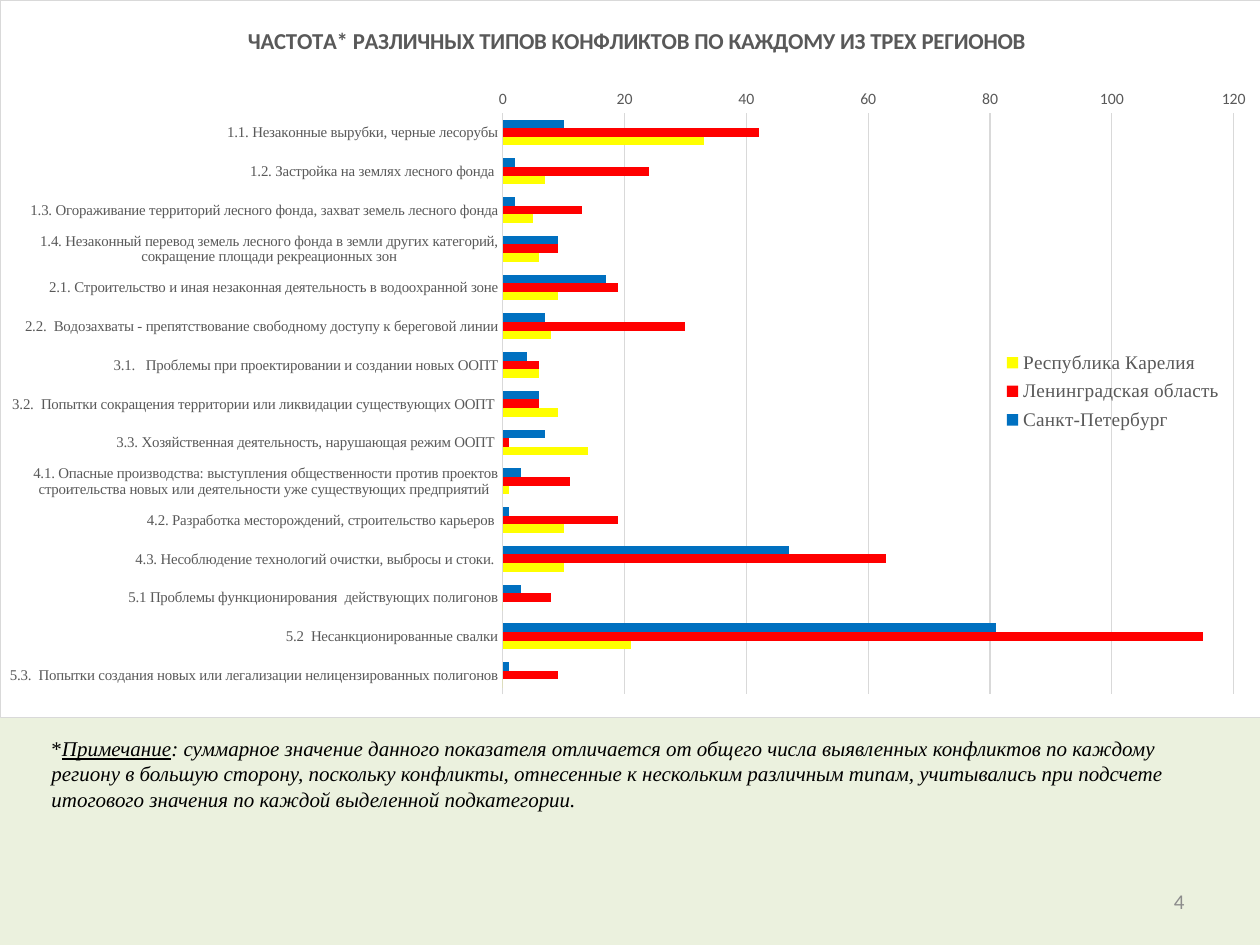
"""Slide with a bar chart of conflict types in three regions and a footnote."""
import pptx
import pptx.chart.data
import pptx.dml.color
import pptx.enum.chart
import pptx.enum.text
import pptx.oxml
import pptx.oxml.ns
import pptx.util

RGB = pptx.dml.color.RGBColor
PAPER = RGB(0xEB, 0xF1, 0xDE)
TEXT = RGB(0x59, 0x59, 0x59)
RULE = RGB(0xD9, 0xD9, 0xD9)
MUTED = RGB(0x8C, 0x8C, 0x8C)
BLACK = RGB(0, 0, 0)
BLUE = RGB(0x00, 0x70, 0xC0)
RED = RGB(0xFF, 0, 0)
YELLOW = RGB(0xFF, 0xFF, 0)
SANS, SERIF = "Calibri", "Times New Roman"

CATEGORIES = [
    "1.1. Незаконные вырубки, черные лесорубы",
    "1.2. Застройка на землях лесного фонда ",
    "1.3. Огораживание территорий лесного фонда, захват земель лесного фонда",
    "1.4. Незаконный перевод земель лесного фонда в земли других категорий, "
    "сокращение площади рекреационных зон",
    "2.1. Строительство и иная незаконная деятельность в водоохранной зоне",
    "2.2.  Водозахваты - препятствование свободному доступу к береговой линии",
    "3.1.   Проблемы при проектировании и создании новых ООПТ",
    "3.2.  Попытки сокращения территории или ликвидации существующих ООПТ ",
    "3.3. Хозяйственная деятельность, нарушающая режим ООПТ ",
    "4.1. Опасные производства: выступления общественности против проектов "
    "строительства новых или деятельности уже существующих предприятий ",
    "4.2. Разработка месторождений, строительство карьеров ",
    "4.3. Несоблюдение технологий очистки, выбросы и стоки. ",
    "5.1 Проблемы функционирования  действующих полигонов",
    "5.2  Несанкционированные свалки",
    "5.3.  Попытки создания новых или легализации нелицензированных полигонов",
]
REGIONS = [
    ("Санкт-Петербург", BLUE, (10, 2, 2, 9, 17, 7, 4, 6, 7, 3, 1, 47, 3, 81, 1)),
    ("Ленинградская область", RED, (42, 24, 13, 9, 19, 30, 6, 6, 1, 11, 19, 63, 8, 115, 9)),
    ("Республика Карелия", YELLOW, (33, 7, 5, 6, 9, 8, 6, 9, 14, 1, 10, 10, 0, 21, 0)),
]
NOTE = [
    ("*", False, False),
    ("Примечание", True, True),
    (": суммарное значение данного показателя отличается от общего числа выявленных "
     "конфликтов по каждому региону в большую сторону, поскольку конфликты, отнесенные "
     "к нескольким различным типам, учитывались при подсчете итогового значения "
     "по каждой выделенной подкатегории.", True, False),
]


def style(font, name, size, color):
    font.name, font.size = name, pptx.util.Pt(size)
    font.color.rgb = color


def place(element, index, target, x, y, w, h):
    for old in element.findall(pptx.oxml.ns.qn("c:layout")):
        element.remove(old)
    inner = f'<c:layoutTarget val="{target}"/>' if target else ""
    element.insert(index, pptx.oxml.parse_xml(
        f'<c:layout {pptx.oxml.ns.nsdecls("c")}><c:manualLayout>{inner}'
        '<c:xMode val="edge"/><c:yMode val="edge"/>'
        f'<c:x val="{x}"/><c:y val="{y}"/><c:w val="{w}"/><c:h val="{h}"/>'
        '</c:manualLayout></c:layout>'))


prs = pptx.Presentation()
prs.slide_width, prs.slide_height = pptx.util.Inches(10), pptx.util.Inches(7.5)
W, H = prs.slide_width, prs.slide_height
s = prs.slides.add_slide(prs.slide_layouts[6])
s.background.fill.solid()
s.background.fill.fore_color.rgb = PAPER

data = pptx.chart.data.CategoryChartData()
data.categories = CATEGORIES
for name, color, values in REGIONS:
    data.add_series(name, values)
chart = s.shapes.add_chart(
    pptx.enum.chart.XL_CHART_TYPE.BAR_CLUSTERED,
    0, 0, int(W * 1.01), int(H * 0.76), data).chart
style(chart.font, SANS, 10, BLACK)
chart._chartSpace.chart.addnext(pptx.oxml.parse_xml(
    f'<c:spPr {pptx.oxml.ns.nsdecls("c", "a")}>'
    '<a:solidFill><a:srgbClr val="FFFFFF"/></a:solidFill>'
    f'<a:ln w="{pptx.util.Pt(0.75)}"><a:solidFill><a:srgbClr val="{RULE}"/></a:solidFill></a:ln>'
    '</c:spPr>'))

chart.has_title = True
tf = chart.chart_title.text_frame
tf.text = "ЧАСТОТА* РАЗЛИЧНЫХ ТИПОВ КОНФЛИКТОВ ПО КАЖДОМУ ИЗ ТРЕХ РЕГИОНОВ"
style(tf.paragraphs[0].runs[0].font, SANS, 13, TEXT)
tf.paragraphs[0].runs[0].font.bold = True
chart.chart_title.include_in_layout = False

plot = chart.plots[0]
plot.gap_width, plot.overlap, plot.vary_by_categories = 150, 0, False
for series, (name, color, values) in zip(plot.series, REGIONS):
    series.format.fill.solid()
    series.format.fill.fore_color.rgb = color

for axis, name, size in ((chart.category_axis, SERIF, 8.5), (chart.value_axis, SANS, 9)):
    style(axis.tick_labels.font, name, size, TEXT)
    axis.major_tick_mark = axis.minor_tick_mark = pptx.enum.chart.XL_TICK_MARK.NONE
cat, val = chart.category_axis, chart.value_axis
cat.reverse_order = True
val.minimum_scale, val.maximum_scale, val.major_unit = 0, 120, 20
val.has_major_gridlines = True
val.format.line.fill.background()
for line in (cat.format.line, val.major_gridlines.format.line):
    line.color.rgb, line.width = RULE, pptx.util.Pt(0.75)

chart.has_legend = True
legend = chart.legend
legend.position = pptx.enum.chart.XL_LEGEND_POSITION.RIGHT
legend.include_in_layout = True
style(legend.font, SERIF, 11, TEXT)
place(legend._element, 1, None, 0.78, 0.48, 0.19, 0.13)
place(chart._chartSpace.chart.plotArea, 0, "inner", 0.395, 0.157, 0.575, 0.811)

boxes = [
    ((0.717, 0.927, 0.233, 0.053), [("4", False, False)], SANS, MUTED,
     pptx.enum.text.PP_ALIGN.RIGHT),
    ((0.031, 0.771, 0.945, 0.095), NOTE, SERIF, BLACK, pptx.enum.text.PP_ALIGN.LEFT),
]
for (x, y, w, h), runs, name, color, align in boxes:
    tf = s.shapes.add_textbox(int(W * x), int(H * y), int(W * w), int(H * h)).text_frame
    tf.word_wrap = True
    tf.vertical_anchor = pptx.enum.text.MSO_ANCHOR.MIDDLE
    p = tf.paragraphs[0]
    p.alignment = align
    for text, italic, underline in runs:
        r = p.add_run()
        r.text = text
        style(r.font, name, 12, color)
        r.font.italic, r.font.underline = italic, underline

prs.save("out.pptx")
